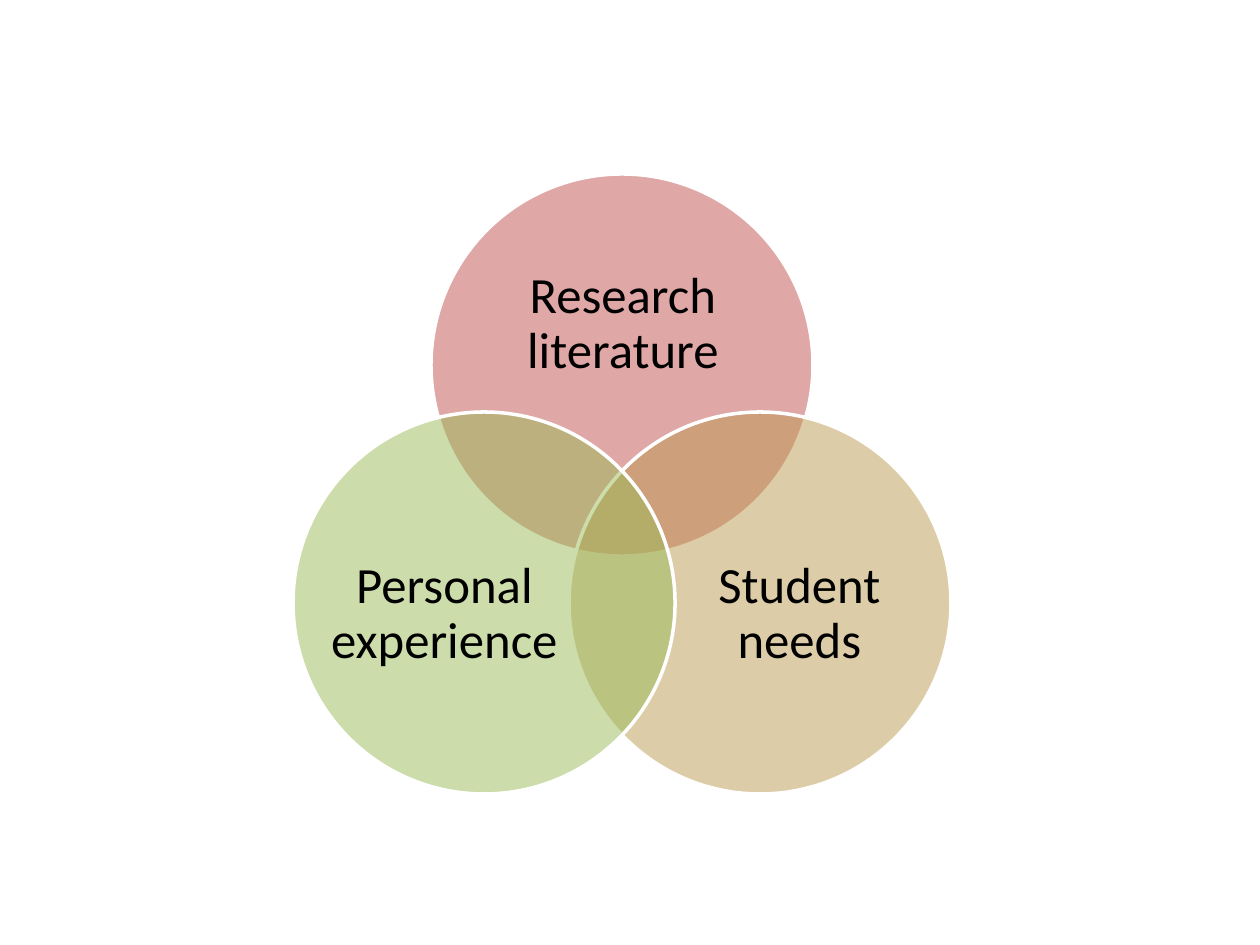
from dataclasses import dataclass

from lxml.etree import SubElement
from pptx import Presentation
from pptx.dml.color import RGBColor
from pptx.enum.shapes import MSO_SHAPE
from pptx.enum.text import MSO_ANCHOR, PP_ALIGN
from pptx.oxml.ns import qn
from pptx.shapes.shapetree import GroupShapes
from pptx.util import Emu, Inches, Pt

PX_PER_INCH = 126
DIAMETER = 382
RED = RGBColor(0xC0, 0x50, 0x4D)
TAN = RGBColor(0xBD, 0x9B, 0x53)
GREEN = RGBColor(0x9B, 0xBB, 0x59)
WHITE = RGBColor(0xFF, 0xFF, 0xFF)
BLACK = RGBColor(0, 0, 0)


@dataclass(frozen=True)
class Box:
    left: int
    top: int
    width: int
    height: int

    def emu(self) -> list[Emu]:
        lengths = (self.left, self.top, self.width, self.height)
        return [Emu(round(Inches(n) / PX_PER_INCH)) for n in lengths]


@dataclass(frozen=True)
class VennSet:
    label: str
    color: RGBColor
    left: int
    top: int
    label_box: Box


VENN_SETS = (
    VennSet("Research literature", RED, 431, 174, Box(483, 239, 280, 171)),
    VennSet("Student needs", TAN, 569, 412, Box(685, 510, 229, 209)),
    VennSet("Personal experience", GREEN, 293, 412, Box(330, 510, 229, 209)),
)


def add_circle(shapes: GroupShapes, venn: VennSet) -> None:
    box = Box(venn.left, venn.top, DIAMETER, DIAMETER)
    sp = shapes.add_shape(MSO_SHAPE.OVAL, *box.emu())
    sp.shadow.inherit = False
    sp.fill.solid()
    sp.fill.fore_color.rgb = venn.color
    color = sp.fill._xPr.find(f"{qn('a:solidFill')}/{qn('a:srgbClr')}")
    SubElement(color, qn("a:alpha"), val="50000")
    sp.line.color.rgb = WHITE
    sp.line.width = Pt(2)


def add_label(shapes: GroupShapes, venn: VennSet) -> None:
    tf = shapes.add_textbox(*venn.label_box.emu()).text_frame
    tf.word_wrap = True
    tf.vertical_anchor = MSO_ANCHOR.MIDDLE
    tf.margin_left = tf.margin_top = tf.margin_right = tf.margin_bottom = 0
    tf.text = venn.label
    p = tf.paragraphs[0]
    p.alignment = PP_ALIGN.CENTER
    p.line_spacing = 0.9
    r = p.runs[0]
    r.font.name = "Calibri"
    r.font.size = Pt(29)
    r.font.color.rgb = BLACK


def main() -> None:
    """Build the Venn diagram slide."""
    prs = Presentation()
    prs.slide_width, prs.slide_height = Inches(10), Inches(7.5)
    s = prs.slides.add_slide(prs.slide_layouts[6])
    diagram = s.shapes.add_group_shape()
    for venn in VENN_SETS:
        add_circle(diagram.shapes, venn)
        add_label(diagram.shapes, venn)
    prs.save("out.pptx")


if __name__ == "__main__":
    main()
